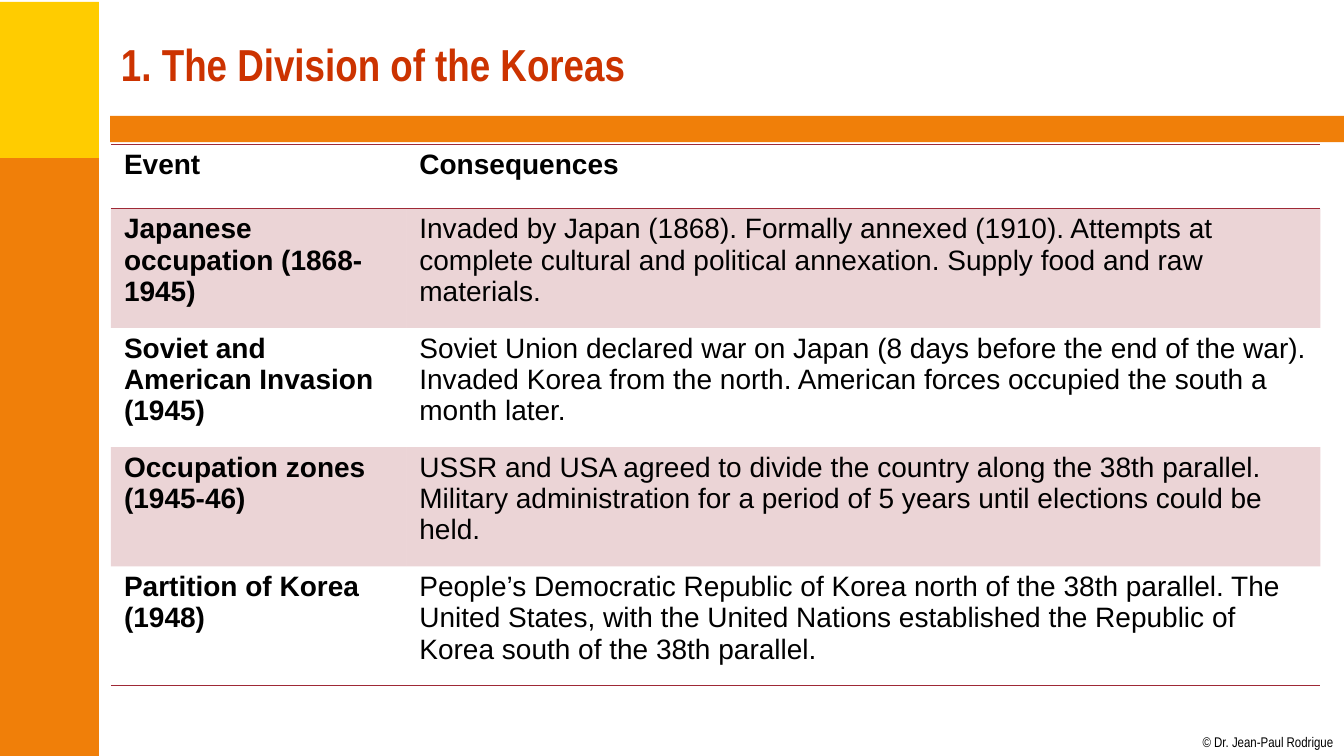
"""Build the slide on the division of the Koreas."""
from dataclasses import dataclass

from lxml import etree
from pptx import Presentation
from pptx.dml.color import RGBColor
from pptx.enum import shapes, text
from pptx.oxml import ns
from pptx.util import Pt

ORANGE, YELLOW, RED, MAROON, BLACK = "F07F09", "FFCC00", "CC3300", "9F2936", "000000"
NO_TABLE_STYLE = "{2D5ABB26-0587-4C30-8999-92F81FD0307C}"
TITLE_FONT = {"name": "Arial Narrow", "size": Pt(32), "bold": True}
CREDIT_FONT = {"name": "Arial Narrow", "size": Pt(10), "bold": False}
TABLE_FONT = {"name": "Arial", "size": Pt(20)}
CELL_MARGINS = {"margin_left": Pt(9.4), "margin_right": Pt(9.4),
                "margin_top": Pt(3.6), "margin_bottom": Pt(3.6)}


@dataclass
class Band:
    left: float
    top: float
    width: float
    height: float
    color: str


@dataclass
class Event:
    name: str
    consequences: str


BANDS = [
    Band(0, 1.4, 70.6, 113.8, YELLOW),
    Band(0, 113, 70.6, 427, ORANGE),
    Band(78.6, 82.8, 881.4, 18.7, ORANGE),
]
EVENTS = [
    Event("Event", "Consequences"),
    Event("Japanese occupation (1868-1945)",
          "Invaded by Japan (1868). Formally annexed (1910). Attempts at complete "
          "cultural and political annexation. Supply food and raw materials."),
    Event("Soviet and American Invasion (1945)",
          "Soviet Union declared war on Japan (8 days before the end of the war). Invaded "
          "Korea from the north. American forces occupied the south a month later."),
    Event("Occupation zones (1945-46)",
          "USSR and USA agreed to divide the country along the 38th parallel. Military "
          "administration for a period of 5 years until elections could be held."),
    Event("Partition of Korea (1948)",
          "People’s Democratic Republic of Korea north of the 38th parallel. The United "
          "States, with the United Nations established the Republic of Korea south of "
          "the 38th parallel."),
]


def rgb(color: str) -> RGBColor:
    return RGBColor.from_string(color)


def apply(target, values: dict) -> None:
    for name, value in values.items():
        setattr(target, name, value)


def write(frame, wording: str, font: dict, color: str) -> None:
    paragraph = frame.paragraphs[0]
    paragraph.text = wording
    paragraph.alignment = text.PP_ALIGN.LEFT
    apply(paragraph.runs[0].font, font)
    paragraph.runs[0].font.color.rgb = rgb(color)


def draw_band(slide, band: Band) -> None:
    shape = slide.shapes.add_shape(shapes.MSO_SHAPE.RECTANGLE, Pt(band.left), Pt(band.top),
                                   Pt(band.width), Pt(band.height))
    shape.shadow.inherit = False
    shape.fill.solid()
    shape.fill.fore_color.rgb = rgb(band.color)
    shape.line.fill.background()


def tint(cell, color: str, percent: int) -> None:
    cell.fill.solid()
    cell.fill.fore_color.rgb = rgb(color)
    shade = next(cell._tc.get_or_add_tcPr().iter(ns.qn("a:srgbClr")))
    etree.SubElement(shade, ns.qn("a:alpha"), val=str(percent * 1000))


def rule(cell, side: str, color: str) -> None:
    line = etree.Element(ns.qn(f"a:ln{side}"), w=str(Pt(1)))
    fill = etree.SubElement(line, ns.qn("a:solidFill"))
    etree.SubElement(fill, ns.qn("a:srgbClr"), val=color)
    cell._tc.get_or_add_tcPr().insert(0, line)


def draw_table(slide, events: list[Event]) -> None:
    last = len(events) - 1
    table = slide.shapes.add_table(len(events), 2, Pt(79.2), Pt(103), Pt(864), Pt(386.8)).table
    table._tbl.tblPr.find(ns.qn("a:tableStyleId")).text = NO_TABLE_STYLE
    table.horz_banding = False
    for column, width in zip(table.columns, (211, 653)):
        column.width = Pt(width)
    for index, event in enumerate(events):
        table.rows[index].height = Pt(85.2 if index else 46)
        for position, wording in enumerate((event.name, event.consequences)):
            cell = table.cell(index, position)
            apply(cell, CELL_MARGINS)
            bold = index == 0 or position == 0
            write(cell.text_frame, wording, {**TABLE_FONT, "bold": bold}, BLACK)
            if index % 2:
                tint(cell, MAROON, 20)
            else:
                cell.fill.background()
            if index in (0, last):
                rule(cell, "B", MAROON)
            if index == 0:
                rule(cell, "T", MAROON)


def draw_title(slide, wording: str) -> None:
    title = slide.shapes.title
    apply(title, {"left": Pt(79.2), "top": Pt(8), "width": Pt(864), "height": Pt(75)})
    title.text_frame.vertical_anchor = text.MSO_ANCHOR.MIDDLE
    write(title.text_frame, wording, TITLE_FONT, RED)


def draw_credit(slide, wording: str) -> None:
    frame = slide.shapes.add_textbox(Pt(859), Pt(524.2), Pt(94.3), Pt(12.2)).text_frame
    apply(frame, {"margin_left": 0, "margin_right": 0, "margin_top": 0, "margin_bottom": 0,
                  "word_wrap": False, "auto_size": text.MSO_AUTO_SIZE.SHAPE_TO_FIT_TEXT})
    write(frame, wording, CREDIT_FONT, BLACK)


def main() -> None:
    presentation = Presentation()
    apply(presentation, {"slide_width": Pt(960), "slide_height": Pt(540)})
    slide = presentation.slides.add_slide(presentation.slide_layouts.get_by_name("Title Only"))
    for band in BANDS:
        draw_band(slide, band)
    draw_credit(slide, "© Dr. Jean-Paul Rodrigue")
    draw_title(slide, "1. The Division of the Koreas")
    draw_table(slide, EVENTS)
    presentation.save("out.pptx")


if __name__ == "__main__":
    main()
